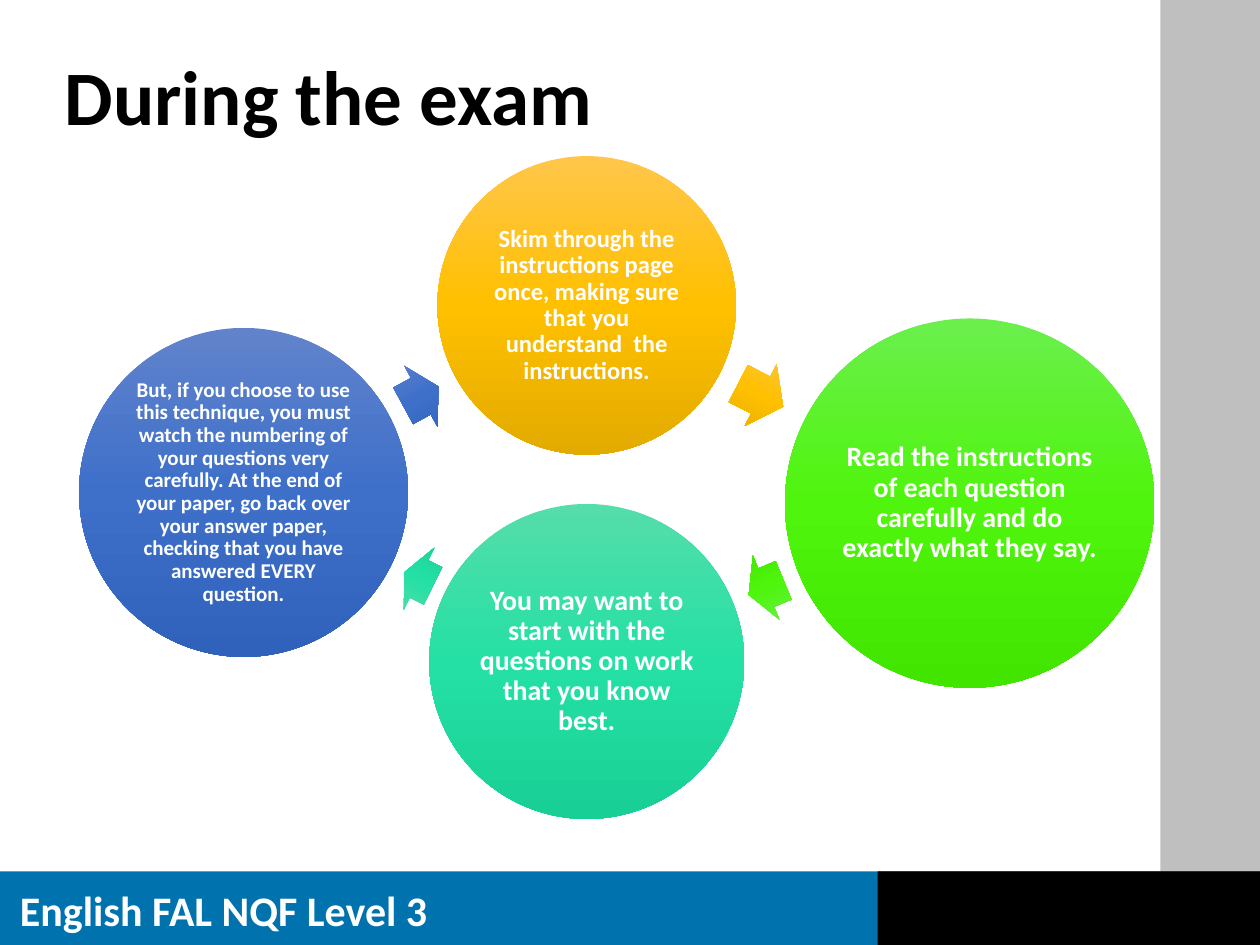
"""Build the "During the exam" slide with its cycle of four steps."""
from copy import deepcopy

from pptx import Presentation
from pptx.dml.color import RGBColor
from pptx.enum.shapes import MSO_SHAPE
from pptx.enum.text import MSO_ANCHOR, PP_ALIGN
from pptx.util import Pt

RECTANGLE, OVAL, ARROW = MSO_SHAPE.RECTANGLE, MSO_SHAPE.OVAL, MSO_SHAPE.RIGHT_ARROW
LEFT, CENTER = PP_ALIGN.LEFT, PP_ALIGN.CENTER
MIDDLE, TOP = MSO_ANCHOR.MIDDLE, MSO_ANCHOR.TOP
FONT = "Calibri"
WHITE, BLACK = "FFFFFF", "000000"
ARROW_HEIGHT = 39.6

TITLE = "During the exam"
FOOTER = "English FAL NQF Level 3"
BANDS = [
    ((663.1, 0, 56.9, 539.3), "BFBFBF"),
    ((0, 498, 720, 42), "0072AE"),
    ((501.5, 498, 218.5, 42), BLACK),
]
STEPS = [
    {"text": "Skim through the instructions page once, making sure that you "
             "understand  the instructions.",
     "size": 14, "colors": ("FFC64B", "FFC000", "E3AB00"),
     "circle": (250, 89.2, 170.6), "arrow": (420.3, 206, 28.8, 27.3)},
    {"text": "Read the instructions of each question carefully and do exactly "
             "what they say.",
     "size": 16, "colors": ("6BEF4D", "4FF50D", "41E500"),
     "circle": (448.6, 182, 211), "arrow": (427, 316, 21.6, 157.5)},
    {"text": "You may want to start with the questions on work that you know best.",
     "size": 16, "colors": ("55DDAB", "25E0A4", "18D095"),
     "circle": (245.3, 288, 180), "arrow": (230.4, 311, 18, 206.2)},
    {"text": "But, if you choose to use this technique, you must watch the "
             "numbering of your questions very carefully. At the end of your "
             "paper, go back over your answer paper, checking that you have "
             "answered EVERY question.",
     "size": 12, "colors": ("6183CB", "3E70CA", "3062BB"),
     "circle": (45.2, 187.4, 188), "arrow": (229, 206.6, 23, 331.4)},
]


def rgb(code):
    return RGBColor.from_string(code)


def write(shape, text, size, color=WHITE, align=LEFT, anchor=TOP, spacing=1.0, inset=None):
    frame = shape.text_frame
    frame.word_wrap = True
    frame.vertical_anchor = anchor
    if inset is not None:
        frame.margin_left = frame.margin_right = Pt(inset)
        frame.margin_top = frame.margin_bottom = Pt(inset)
    paragraph = frame.paragraphs[0]
    paragraph.text = text
    paragraph.alignment = align
    paragraph.line_spacing = spacing
    font = paragraph.font
    font.name, font.size, font.bold = FONT, Pt(size), True
    font.color.rgb = rgb(color)


def add_plain(slide, kind, box):
    shape = slide.shapes.add_shape(kind, *map(Pt, box))
    shape.shadow.inherit = False
    shape.line.fill.background()
    return shape


def shade(shape, colors):
    fill = shape.fill
    fill.gradient()
    fill.gradient_angle = 270
    stop_list = shape.element.spPr.find(".//{*}gsLst")
    stop_list.append(deepcopy(stop_list[-1]))
    for stop, position, color in zip(fill.gradient_stops, (0, 0.5, 1), colors):
        stop.position = position
        stop.color.rgb = rgb(color)


def add_step(slide, step):
    left, top, diameter = step["circle"]
    circle = add_plain(slide, OVAL, (left, top, diameter, diameter))
    shade(circle, step["colors"])
    write(circle, step["text"], step["size"], align=CENTER, anchor=MIDDLE,
          spacing=0.9, inset=1.3)

    left, top, width, angle = step["arrow"]
    arrow = add_plain(slide, ARROW, (left, top, width, ARROW_HEIGHT))
    arrow.adjustments[0], arrow.adjustments[1] = 0.6, 0.5
    arrow.rotation = angle
    shade(arrow, step["colors"])


def main():
    deck = Presentation()
    deck.slide_width, deck.slide_height = Pt(720), Pt(540)
    slide = deck.slides.add_slide(deck.slide_layouts[6])

    for box, color in BANDS:
        band = add_plain(slide, RECTANGLE, box)
        band.fill.solid()
        band.fill.fore_color.rgb = rgb(color)

    footer = slide.shapes.add_textbox(Pt(4.3), Pt(502), Pt(270), Pt(36))
    write(footer, FOOTER, 24)
    title = slide.shapes.add_textbox(Pt(30), Pt(28.8), Pt(623), Pt(57))
    write(title, TITLE, 44, color=BLACK, anchor=MIDDLE, spacing=0.9)

    for step in STEPS:
        add_step(slide, step)
    deck.save("out.pptx")


if __name__ == "__main__":
    main()
